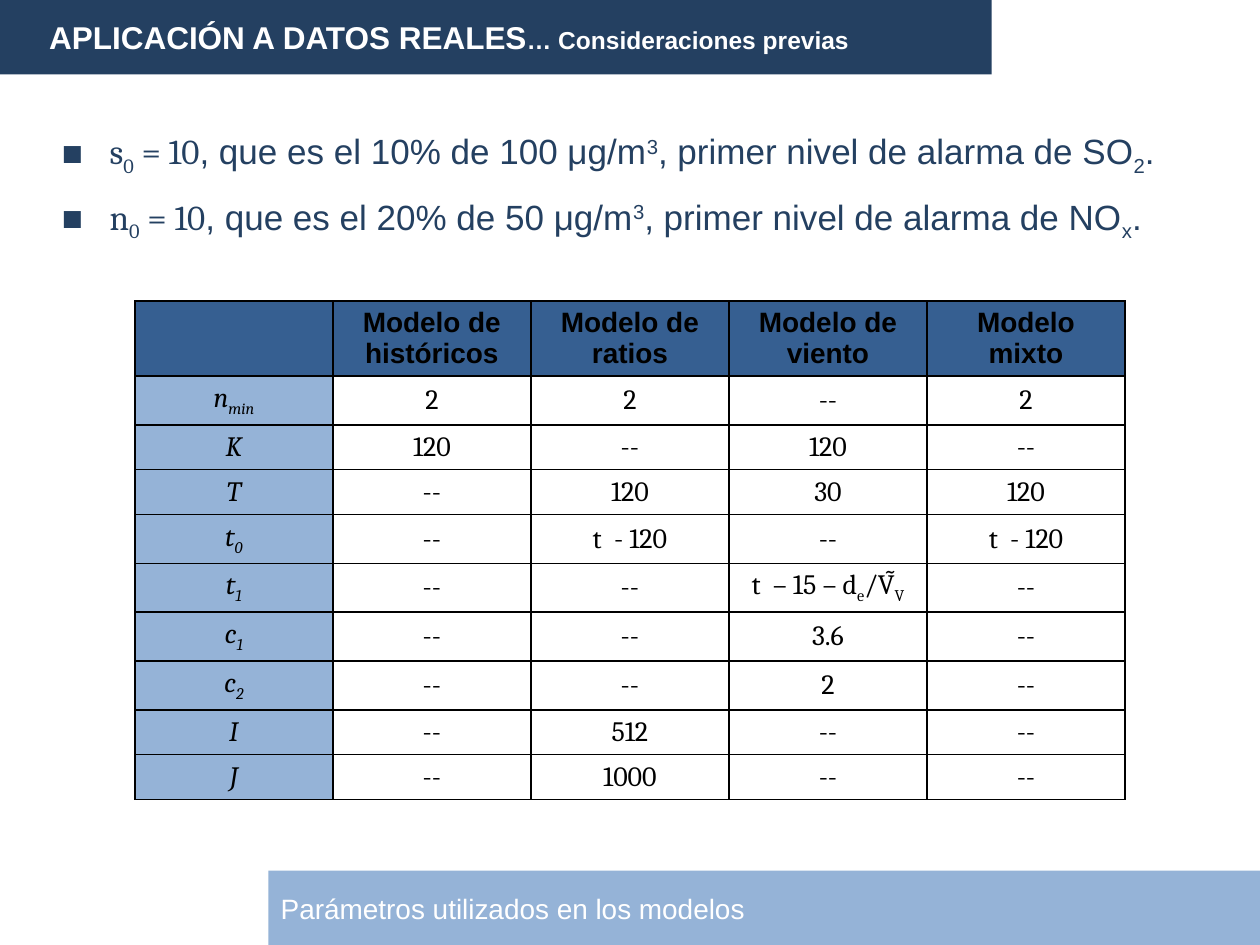
from lxml import etree
from pptx import Presentation
from pptx.dml.color import RGBColor
from pptx.enum.shapes import MSO_SHAPE
from pptx.enum.text import MSO_ANCHOR, MSO_AUTO_SIZE, PP_ALIGN
from pptx.oxml.ns import qn
from pptx.util import Inches, Pt

RECT = MSO_SHAPE.RECTANGLE
MIDDLE, TOP = MSO_ANCHOR.MIDDLE, MSO_ANCHOR.TOP
LEFT, CENTER, JUSTIFY = PP_ALIGN.LEFT, PP_ALIGN.CENTER, PP_ALIGN.JUSTIFY
NO_AUTOFIT = MSO_AUTO_SIZE.NONE

# Content: "|" separates runs, "_" starts a subscript and "^" a superscript
TITLE = "APLICACIÓN A DATOS REALES"
SUBTITLE = "… Consideraciones previas"
CAPTION = "Parámetros utilizados en los modelos"
BULLETS = [
    ("s|_0| = 10", ", que es el 10% de 100 μg/m|^3|, primer nivel de alarma de SO|_2|."),
    ("n|_0| = 10", ", que es el 20% de 50 μg/m|^3|, primer nivel de alarma de NO|_x|."),
]
ROWS = [
    ("", "Modelo de históricos", "Modelo de ratios", "Modelo de viento", "Modelo mixto"),
    ("n|_min", "2", "2", "--", "2"),
    ("K", "120", "--", "120", "--"),
    ("T", "--", "120", "30", "120"),
    ("t|_0", "--", "t  - 120", "--", "t  - 120"),
    ("t|_1", "--", "--", "t  – 15 – d|_e|/Ṽ|_V", "--"),
    ("c|_1", "--", "--", "3.6", "--"),
    ("c|_2", "--", "--", "2", "--"),
    ("I", "--", "512", "--", "--"),
    ("J", "--", "1000", "--", "--"),
]

THEME = {
    "sans": "Arial", "math": "Cambria",
    "dark": "244061", "header": "365F91", "light": "95B3D7",
    "white": "FFFFFF", "black": "000000",
    "title": 18, "subtitle": 14, "body": 20, "table": 16,
}
BASELINES = {"_": "-25000", "^": "30000"}

# Layout in inches
SLIDE_W, SLIDE_H = 10, 7.5
BAR_W, BAR_H = 7.87, 0.59
MARGIN = 0.39
INDENT = 0.38
TABLE_X, TABLE_Y, COL_W, ROW_H = 1.07, 2.39, 1.572, 0.35


def color(name):
    return RGBColor.from_string(THEME[name])


def add_text(p, text, size, ink, font="sans", bold=False, italic=False):
    """Append marked-up text to a paragraph as formatted runs."""
    for part in filter(None, text.split("|")):
        r = p.add_run()
        baseline = BASELINES.get(part[0])
        r.text = part[1:] if baseline else part
        r.font.name, r.font.size = THEME[font], Pt(THEME[size])
        r.font.bold, r.font.italic = bold, italic
        r.font.color.rgb = color(ink)
        if baseline:
            r.font._element.set("baseline", baseline)


def place(sp, x, y, w, h):
    sp.left, sp.top, sp.width, sp.height = map(Inches, (x, y, w, h))


def format_frame(sp, anchor, align, left=0.1):
    tf = sp.text_frame
    tf.word_wrap, tf.auto_size, tf.vertical_anchor = True, NO_AUTOFIT, anchor
    tf.margin_left = Inches(left)
    tf.paragraphs[0].alignment = align
    return tf


def fill(target, name):
    target.fill.solid()
    target.fill.fore_color.rgb = color(name)


def add_bullet(p):
    pPr = p._p.get_or_add_pPr()
    pPr.set("marL", str(Inches(INDENT)))
    pPr.set("indent", str(-Inches(INDENT)))
    bu_color = etree.SubElement(pPr, qn("a:buClr"))
    etree.SubElement(bu_color, qn("a:srgbClr"), val=THEME["dark"])
    etree.SubElement(pPr, qn("a:buFont"), typeface=THEME["sans"])
    etree.SubElement(pPr, qn("a:buChar"), char="■")


def add_borders(cell):
    tcPr = cell._tc.get_or_add_tcPr()
    for i, side in enumerate(("lnL", "lnR", "lnT", "lnB")):
        ln = etree.Element(qn("a:" + side), w=str(Pt(1)))
        solid = etree.SubElement(ln, qn("a:solidFill"))
        etree.SubElement(solid, qn("a:srgbClr"), val=THEME["black"])
        tcPr.insert(i, ln)


def build_table(s):
    n_rows, n_cols = len(ROWS), len(ROWS[0])
    table = s.shapes.add_table(
        n_rows, n_cols, Inches(TABLE_X), Inches(TABLE_Y),
        Inches(COL_W * n_cols), Inches(ROW_H * n_rows)).table
    table.horz_banding = table.first_row = False
    for i, row in enumerate(ROWS):
        for j, text in enumerate(row):
            cell = table.cell(i, j)
            cell.vertical_anchor = MIDDLE
            fill(cell, "header" if i == 0 else "light" if j == 0 else "white")
            add_borders(cell)
            p = cell.text_frame.paragraphs[0]
            p.alignment = CENTER
            add_text(p, text, "table", "black", font="math" if i else "sans",
                     bold=i == 0, italic=i > 0 and j == 0)


def main():
    prs = Presentation()
    prs.slide_width, prs.slide_height = Inches(SLIDE_W), Inches(SLIDE_H)
    s = prs.slides.add_slide(prs.slide_layouts[1])

    # Title bar
    title = s.shapes.title
    place(title, 0, 0, BAR_W, BAR_H)
    fill(title, "dark")
    p = format_frame(title, MIDDLE, LEFT, left=MARGIN).paragraphs[0]
    add_text(p, TITLE, "title", "white", bold=True)
    add_text(p, SUBTITLE, "subtitle", "white", bold=True)

    # Bulleted assumptions
    body = s.placeholders[1]
    place(body, MARGIN, 0.98, 9.21, 5.53)
    tf = format_frame(body, TOP, JUSTIFY)
    for i, (symbol, meaning) in enumerate(BULLETS):
        p = tf.add_paragraph() if i else tf.paragraphs[0]
        p.alignment, p.space_after = JUSTIFY, Pt(6)
        add_bullet(p)
        add_text(p, symbol, "body", "dark", font="math")
        add_text(p, meaning, "body", "dark")

    # Caption bar
    caption = s.shapes.add_shape(
        RECT, Inches(SLIDE_W - BAR_W), Inches(SLIDE_H - BAR_H),
        Inches(BAR_W), Inches(BAR_H))
    caption.shadow.inherit = False
    caption.line.fill.background()
    fill(caption, "light")
    p = format_frame(caption, MIDDLE, LEFT).paragraphs[0]
    add_text(p, CAPTION, "table", "white")

    # Parameter table
    build_table(s)
    prs.save("out.pptx")


if __name__ == "__main__":
    main()
